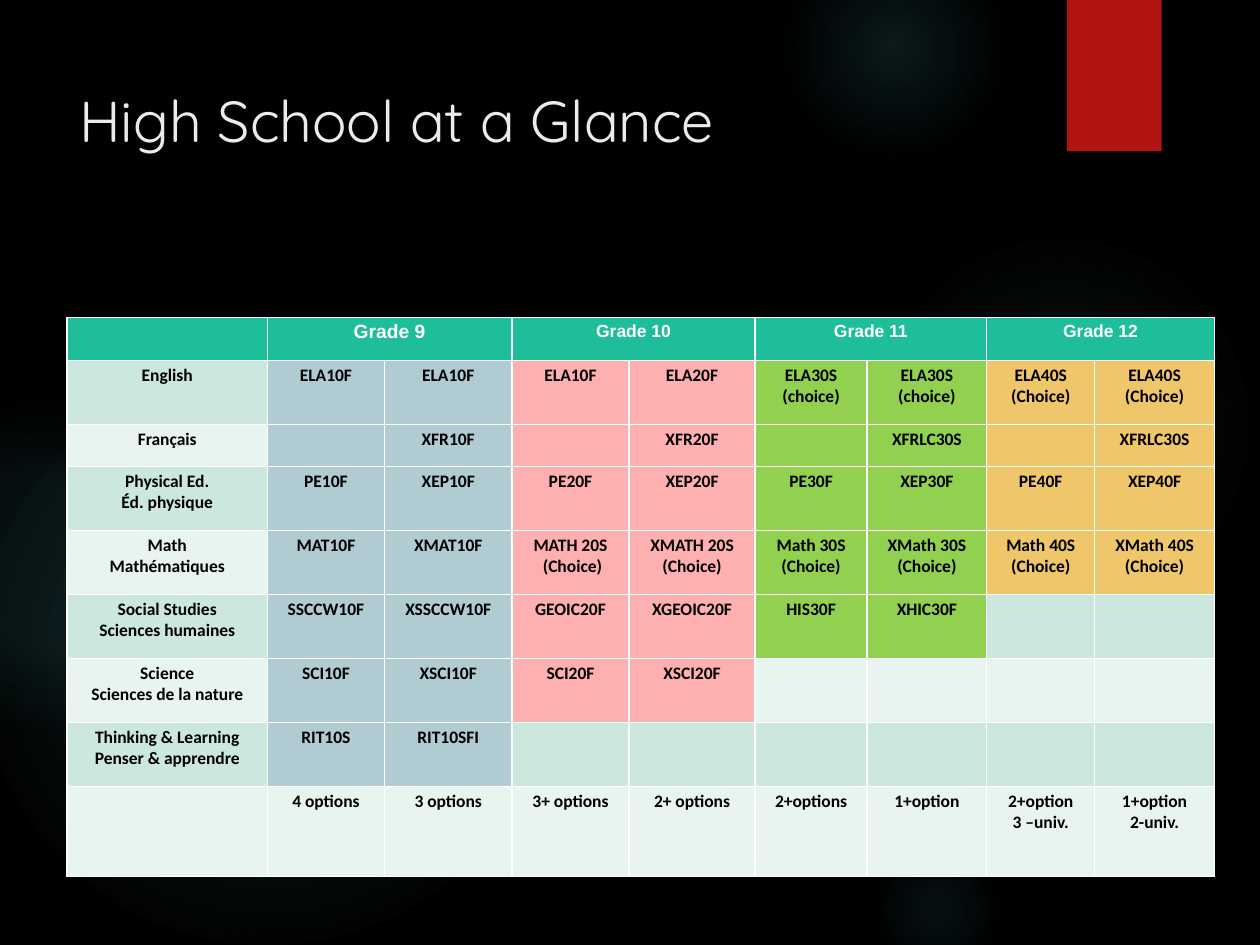
"""Build the "High School at a Glance" course table slide."""
import lxml.etree
import pptx
import pptx.dml.color
import pptx.enum.shapes
import pptx.enum.text
import pptx.oxml
import pptx.oxml.ns
import pptx.util

Cm = pptx.util.Cm
Pt = pptx.util.Pt
RGBColor = pptx.dml.color.RGBColor
qn = pptx.oxml.ns.qn

BLACK = RGBColor(0x00, 0x00, 0x00)
WHITE = RGBColor(0xFF, 0xFF, 0xFF)
TITLE_GREY = RGBColor(0xEB, 0xEB, 0xEB)
RED = RGBColor(0xB0, 0x15, 0x13)
GLOW = RGBColor(0x50, 0xB9, 0xC1)
HEADER = RGBColor(0x1E, 0xBE, 0x9B)
BANDS = [RGBColor(0xE7, 0xF4, 0xEF), RGBColor(0xCC, 0xE8, 0xDE)]
GRADE_COLORS = [
    RGBColor(0xB1, 0xCB, 0xD3),
    RGBColor(0xFE, 0xB0, 0xB0),
    RGBColor(0x92, 0xD0, 0x50),
    RGBColor(0xEF, 0xC7, 0x6A),
]

GLOWS = [
    (17.5, 4.65, 7.82, [(0, 7), (36, 6), (69, 0)]),
    (15.8, -1.27, 4.45, [(0, 14), (36, 7), (73, 0)]),
    (17.5, 16.94, 2.74, [(0, 9), (36, 5), (66, 0)]),
    (-0.43, 7.42, 11.63, [(0, 11), (36, 10), (75, 0)]),
    (-2.34, 8.05, 6.55, [(0, 8), (36, 8), (72, 0)]),
]
COLUMN_WIDTHS = [4.04, 2.36, 2.57, 2.36, 2.54, 2.26, 2.41, 2.18, 2.41]
ROW_HEIGHTS = [0.87, 1.29, 0.85] + [1.29] * 5 + [1.81]
ROWS = [
    ["", "Grade 9", "", "Grade 10", "", "Grade 11", "", "Grade 12", ""],
    ["English", "ELA10F", "ELA10F", "ELA10F", "ELA20F", "ELA30S\n(choice)",
     "ELA30S\n(choice)", "ELA40S\n(Choice)", "ELA40S\n(Choice)"],
    ["Français", "", "XFR10F", "", "XFR20F", "", "XFRLC30S", "", "XFRLC30S"],
    ["Physical Ed.\nÉd. physique", "PE10F", "XEP10F", "PE20F", "XEP20F",
     "PE30F", "XEP30F", "PE40F", "XEP40F"],
    ["Math\nMathématiques", "MAT10F", "XMAT10F", "MATH 20S\n (Choice)",
     "XMATH 20S\n(Choice)", "Math 30S\n(Choice)", "XMath 30S\n(Choice)",
     "Math 40S\n(Choice)", "XMath 40S\n(Choice)"],
    ["Social Studies\nSciences humaines", "SSCCW10F", "XSSCCW10F", "GEOIC20F",
     "XGEOIC20F", "HIS30F", "XHIC30F", "", ""],
    ["Science\nSciences de la nature", "SCI10F", "XSCI10F", "SCI20F", "XSCI20F",
     "", "", "", ""],
    ["Thinking & Learning\nPenser & apprendre", "RIT10S", "RIT10SFI",
     "", "", "", "", "", ""],
    ["", "4 options", "3 options", "3+ options", "2+ options", "2+options",
     "1+option", "2+option\n3 –univ.", "1+option\n2-univ."],
]


def add_glow(slide, left, top, size, stops):
    shape = slide.shapes.add_shape(
        pptx.enum.shapes.MSO_SHAPE.OVAL, Cm(left), Cm(top), Cm(size), Cm(size))
    shape.shadow.inherit = False
    shape.line.fill.background()
    shape.fill.background()
    stop_xml = "".join(
        f'<a:gs pos="{position * 1000}"><a:srgbClr val="{GLOW}">'
        f'<a:alpha val="{alpha * 1000}"/></a:srgbClr></a:gs>'
        for position, alpha in stops)
    gradient = pptx.oxml.parse_xml(
        f'<a:gradFill {pptx.oxml.ns.nsdecls("a")} rotWithShape="1">'
        f'<a:gsLst>{stop_xml}</a:gsLst><a:path path="circle">'
        '<a:fillToRect l="50000" t="50000" r="50000" b="50000"/></a:path></a:gradFill>')
    properties = shape._element.spPr
    properties.replace(properties.find(qn("a:noFill")), gradient)


def add_borders(cell):
    properties = cell._tc.get_or_add_tcPr()
    for side in ("lnL", "lnR", "lnT", "lnB"):
        line = lxml.etree.SubElement(properties, qn(f"a:{side}"), w=str(Pt(0.83)))
        fill = lxml.etree.SubElement(line, qn("a:solidFill"))
        lxml.etree.SubElement(fill, qn("a:srgbClr"), val=str(WHITE))


presentation = pptx.Presentation()
presentation.slide_width = Cm(25.4)
presentation.slide_height = Cm(19.05)
slide = presentation.slides.add_slide(presentation.slide_layouts[6])
slide.background.fill.solid()
slide.background.fill.fore_color.rgb = BLACK

for glow in GLOWS:
    add_glow(slide, *glow)

ribbon = slide.shapes.add_shape(
    pptx.enum.shapes.MSO_SHAPE.RECTANGLE, Cm(21.51), Cm(0), Cm(1.91), Cm(3.05))
ribbon.shadow.inherit = False
ribbon.fill.solid()
ribbon.fill.fore_color.rgb = RED
ribbon.line.fill.background()

title = slide.shapes.add_textbox(Cm(1.35), Cm(1.75), Cm(19.28), Cm(3.61))
title.text_frame.word_wrap = True
title.text_frame.text = "High School at a Glance"
paragraph = title.text_frame.paragraphs[0]
paragraph.line_spacing = 0.9
font = paragraph.runs[0].font
font.name = "Quicksand"
font.size = Pt(33)
font.color.rgb = TITLE_GREY

table = slide.shapes.add_table(
    len(ROWS), len(COLUMN_WIDTHS), Cm(1.35), Cm(6.4),
    Cm(sum(COLUMN_WIDTHS)), Cm(sum(ROW_HEIGHTS))).table
for column, width in zip(table.columns, COLUMN_WIDTHS):
    column.width = Cm(width)
for row, height in zip(table.rows, ROW_HEIGHTS):
    row.height = Cm(height)
for column_index in range(1, len(COLUMN_WIDTHS), 2):
    table.cell(0, column_index).merge(table.cell(0, column_index + 1))

for row_index, texts in enumerate(ROWS):
    for column_index, text in enumerate(texts):
        cell = table.cell(row_index, column_index)
        grade = (column_index - 1) // 2
        is_header = row_index == 0
        if is_header:
            color = HEADER
        elif column_index > 0 and row_index + grade <= 7:
            color = GRADE_COLORS[grade]
        else:
            color = BANDS[row_index % 2]
        add_borders(cell)
        cell.fill.solid()
        cell.fill.fore_color.rgb = color
        cell.margin_left = cell.margin_right = Cm(0.16)
        cell.margin_top = cell.margin_bottom = Cm(0.08)
        cell.text_frame.text = text
        for paragraph in cell.text_frame.paragraphs:
            paragraph.alignment = pptx.enum.text.PP_ALIGN.CENTER
            for run in paragraph.runs:
                run.font.name = "Arial" if is_header else "Calibri"
                run.font.size = Pt(11 if text == "Grade 9" else 10)
                run.font.bold = True
                run.font.color.rgb = WHITE if is_header else BLACK
            if not paragraph.runs:
                lxml.etree.SubElement(paragraph._p, qn("a:endParaRPr"), sz="1000")

presentation.save("out.pptx")
